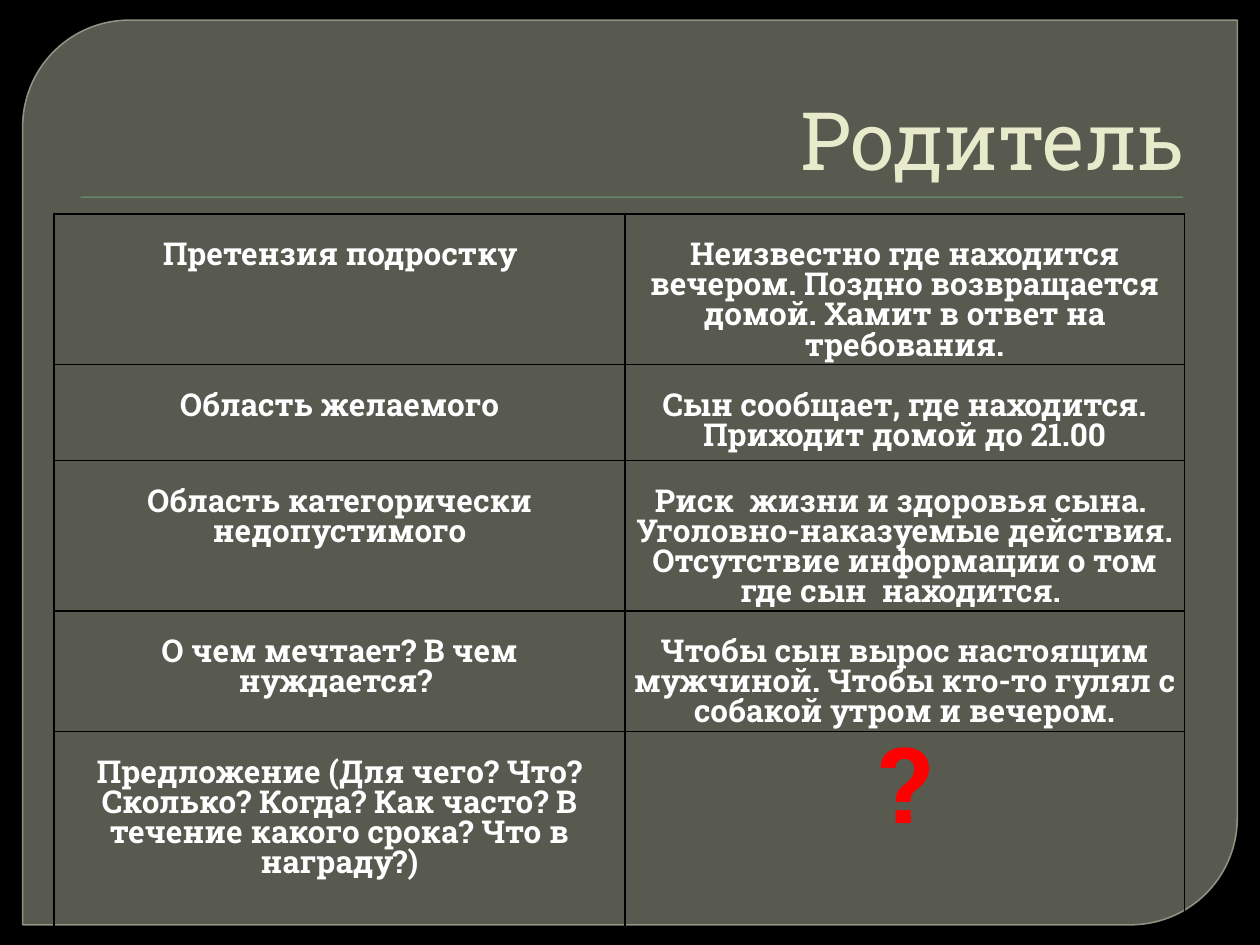
from lxml import etree
from pptx import Presentation
from pptx.dml.color import RGBColor
from pptx.enum.shapes import MSO_SHAPE
from pptx.enum.text import MSO_ANCHOR, PP_ALIGN
from pptx.oxml.ns import qn
from pptx.util import Inches, Pt

FONT = "Roboto Slab"
BLACK = RGBColor(0x00, 0x00, 0x00)
WHITE = RGBColor(0xFF, 0xFF, 0xFF)
RED = RGBColor(0xFF, 0x00, 0x00)
CREAM = RGBColor(0xE7, 0xEA, 0xCB)
PANEL = RGBColor(0x88, 0x8B, 0x7B)
PANEL_EDGE = RGBColor(0x9D, 0xA0, 0x90)
GREEN = RGBColor(0x72, 0xA3, 0x76)

TITLE = "Родитель"
ROWS = [
    ("Претензия подростку",
     "Неизвестно где находится вечером. Поздно возвращается домой. "
     "Хамит в ответ на требования."),
    ("Область желаемого",
     "Сын сообщает, где находится. Приходит домой до 21.00"),
    ("Область категорически недопустимого",
     "Риск  жизни и здоровья сына.  Уголовно-наказуемые действия. "
     "Отсутствие информации о том где сын  находится. "),
    ("О чем мечтает? В чем нуждается? ",
     "Чтобы сын вырос настоящим мужчиной. Чтобы кто-то гулял с собакой "
     "утром и вечером."),
    ("Предложение (Для чего? Что? Сколько? Когда? Как часто? "
     "В течение какого срока? Что в награду?)", "?"),
]
COL_WIDTHS = [4.53, 4.44]
ROW_HEIGHTS = [1.15, 0.76, 0.76, 0.76, 1.91]
LINE_PITCH = 17.2


def set_alpha(fill_parent, percent):
    color = fill_parent.find(qn("a:solidFill"))[0]
    etree.SubElement(color, qn("a:alpha")).set("val", str(percent * 1000))


def add_block(s, kind, box, color):
    sp = s.shapes.add_shape(kind, *map(Inches, box))
    sp.shadow.inherit = False
    sp.fill.solid()
    sp.fill.fore_color.rgb = color
    sp.line.fill.background()
    return sp


def write(p, text, size, color, align, bold=False):
    p.text = text
    p.alignment = align
    font = p.runs[0].font
    font.name, font.size, font.bold = FONT, Pt(size), bold
    font.color.rgb = color


def add_borders(cell):
    """Draw a 1 pt black line on all four sides of a cell."""
    tc_pr = cell._tc.get_or_add_tcPr()
    for i, side in enumerate(("a:lnL", "a:lnR", "a:lnT", "a:lnB")):
        ln = etree.Element(qn(side), w=str(Pt(1)))
        fill = etree.SubElement(ln, qn("a:solidFill"))
        etree.SubElement(fill, qn("a:srgbClr"), val=str(BLACK))
        tc_pr.insert(i, ln)


def fill_cell(cell, text):
    is_question = text == "?"
    cell.fill.background()
    cell.margin_left = cell.margin_right = Inches(0.07)
    cell.margin_top = Pt(LINE_PITCH * (3 if is_question else 1))
    cell.margin_bottom = 0
    p = cell.text_frame.paragraphs[0]
    size, color = (60, RED) if is_question else (18, WHITE)
    write(p, text, size, color, PP_ALIGN.CENTER, bold=True)
    p.line_spacing = Pt(LINE_PITCH)
    add_borders(cell)


def main():
    prs = Presentation()
    prs.slide_width, prs.slide_height = Inches(10), Inches(7.5)
    s = prs.slides.add_slide(prs.slide_layouts[6])
    s.background.fill.solid()
    s.background.fill.fore_color.rgb = BLACK

    panel = add_block(s, MSO_SHAPE.ROUND_2_DIAG_RECTANGLE,
                      (0.18, 0.16, 9.64, 7.18), PANEL)
    panel.adjustments[0], panel.adjustments[1] = 0.118, 0
    panel.line.color.rgb = PANEL_EDGE
    panel.line.width = Pt(0.87)
    set_alpha(panel._element.spPr, 65)
    set_alpha(panel.line._ln, 88)

    add_block(s, MSO_SHAPE.RECTANGLE, (0.64, 1.56, 8.75, 0.01), GREEN)

    title = s.shapes.add_textbox(*map(Inches, (0.5, 0.28, 9, 1.25)))
    tf = title.text_frame
    tf.word_wrap = True
    tf.vertical_anchor = MSO_ANCHOR.BOTTOM
    write(tf.paragraphs[0], TITLE, 46, CREAM, PP_ALIGN.RIGHT)

    table = s.shapes.add_table(
        len(ROWS), len(COL_WIDTHS), Inches(0.43), Inches(1.7),
        Inches(sum(COL_WIDTHS)), Inches(sum(ROW_HEIGHTS))).table
    table.first_row = table.horz_banding = False
    for column, width in zip(table.columns, COL_WIDTHS):
        column.width = Inches(width)
    for row, height, texts in zip(table.rows, ROW_HEIGHTS, ROWS):
        row.height = Inches(height)
        for cell, text in zip(row.cells, texts):
            fill_cell(cell, text)

    prs.save("out.pptx")


if __name__ == "__main__":
    main()
